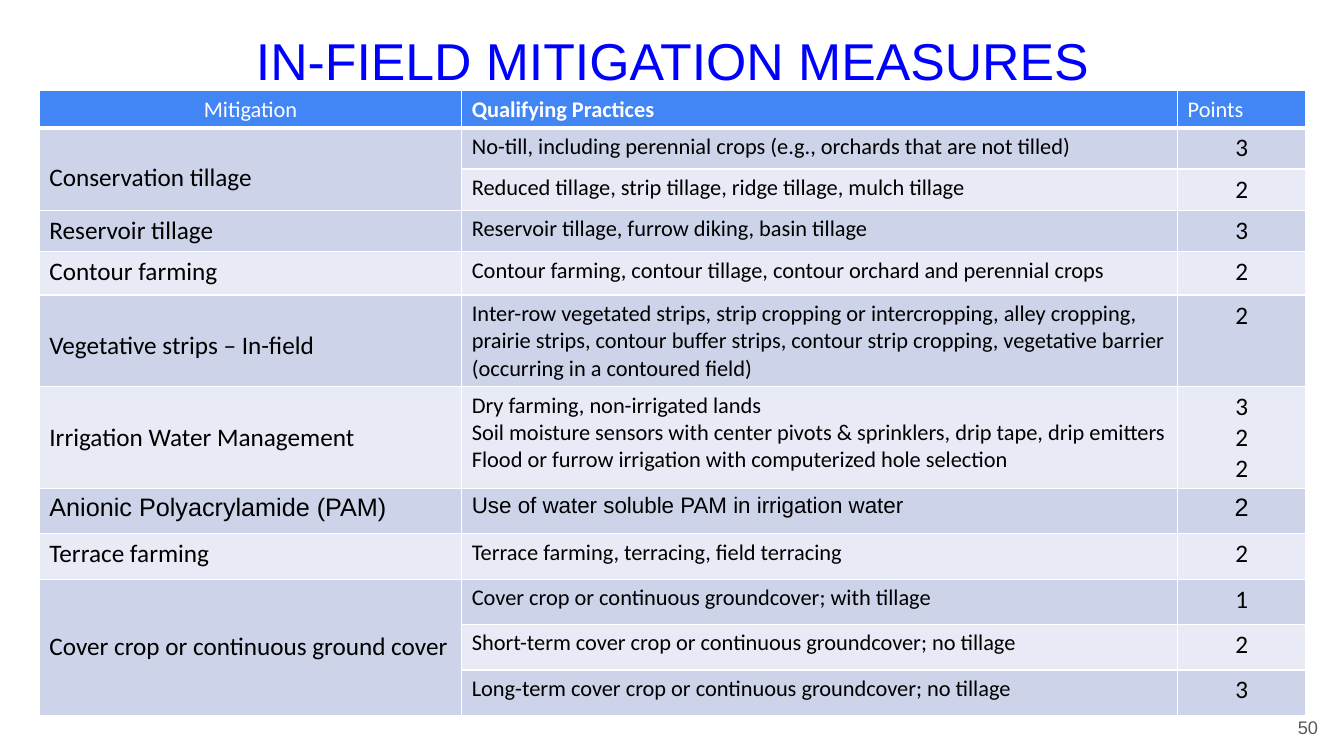
"""Build the in-field mitigation measures slide."""
from dataclasses import dataclass

from lxml import etree
from pptx import Presentation
from pptx.dml.color import RGBColor
from pptx.enum.text import MSO_ANCHOR, PP_ALIGN
from pptx.oxml.ns import qn
from pptx.util import Inches, Pt

LEFT, CENTER, RIGHT = PP_ALIGN.LEFT, PP_ALIGN.CENTER, PP_ALIGN.RIGHT
TOP, MIDDLE = MSO_ANCHOR.TOP, MSO_ANCHOR.MIDDLE


@dataclass(frozen=True)
class Theme:
    """Fonts, colours and type sizes of the slide."""
    sans: str = "Arial"
    body: str = "Calibri"
    title: str = "0000FF"
    number: str = "595959"
    header: str = "4285F4"
    dark_band: str = "CDD4EA"
    light_band: str = "E8EBF5"
    white: str = "FFFFFF"
    black: str = "000000"
    title_size: int = 37
    number_size: int = 13
    large: int = 18
    small: int = 16


THEME = Theme()
COLUMN_WIDTHS = (4.19, 7.1, 1.27)
ROW_HEIGHTS = (0.36, 0.41, 0.41, 0.41, 0.43, 0.91, 1.01) + (0.45,) * 5
LOWERED_TOP = 0.35
HEADERS = (("Mitigation", CENTER, False), ("Qualifying Practices", LEFT, True),
           ("Points", LEFT, False))
MEASURES = (
    ("Conservation tillage", {"top": LOWERED_TOP}, (
        ("No-till, including perennial crops (e.g., orchards that are not tilled)", "3"),
        ("Reduced tillage, strip tillage, ridge tillage, mulch tillage", "2"))),
    ("Reservoir tillage", {}, (
        ("Reservoir tillage, furrow diking, basin tillage", "3"),)),
    ("Contour farming", {}, (
        ("Contour farming, contour tillage, contour orchard and perennial crops", "2"),)),
    ("Vegetative strips – In-field", {"top": LOWERED_TOP}, (
        ("Inter-row vegetated strips, strip cropping or intercropping, alley cropping, "
         "prairie strips, contour buffer strips, contour strip cropping, vegetative "
         "barrier (occurring in a contoured field)", "2"),)),
    ("Irrigation Water Management", {"anchor": MIDDLE}, (
        ("Dry farming, non-irrigated lands\n"
         "Soil moisture sensors with center pivots & sprinklers, drip tape, drip emitters\n"
         "Flood or furrow irrigation with computerized hole selection", "3\n2\n2"),)),
    ("Anionic Polyacrylamide (PAM)", {"font": THEME.sans}, (
        ("Use of water soluble PAM in irrigation water", "2"),)),
    ("Terrace farming", {}, (
        ("Terrace farming, terracing, field terracing", "2"),)),
    ("Cover crop or continuous ground cover", {"anchor": MIDDLE}, (
        ("Cover crop or continuous groundcover; with tillage", "1"),
        ("Short-term cover crop or continuous groundcover; no tillage", "2"),
        ("Long-term cover crop or continuous groundcover; no tillage", "3"))),
)


def write_text(frame, text, *, size, font=THEME.body, color=THEME.black,
               bold=False, align=LEFT, spacing=1.0):
    """Write one formatted paragraph for each line of text."""
    frame.word_wrap = True
    for index, line in enumerate(text.split("\n")):
        para = frame.add_paragraph() if index else frame.paragraphs[0]
        para.alignment = align
        para.line_spacing = spacing
        span = para.add_run()
        span.text = line
        span.font.name = font
        span.font.size = Pt(size)
        span.font.bold = bold
        span.font.color.rgb = RGBColor.from_string(color)


def add_text(slide, text, left, top, width, height, **text_format):
    """Add a vertically centred text box."""
    box = slide.shapes.add_textbox(Inches(left), Inches(top), Inches(width), Inches(height))
    box.text_frame.vertical_anchor = MIDDLE
    write_text(box.text_frame, text, **text_format)


def style_cell(cell, fill, bottom_width=1):
    """Give a cell its white borders and its fill."""
    properties = cell._tc.get_or_add_tcPr()
    for side, width in (("L", 1), ("R", 1), ("T", 1), ("B", bottom_width)):
        line = etree.SubElement(properties, qn(f"a:ln{side}"), w=str(Pt(width)))
        solid = etree.SubElement(line, qn("a:solidFill"))
        etree.SubElement(solid, qn("a:srgbClr"), val=THEME.white)
    cell.fill.solid()
    cell.fill.fore_color.rgb = RGBColor.from_string(fill)


def fill_cell(cell, text, *, anchor=TOP, top=0.05, **text_format):
    """Place text in a cell."""
    cell.vertical_anchor = anchor
    cell.margin_top = Inches(top)
    write_text(cell.text_frame, text, **text_format)


def add_measure(table, row, name, name_format, practices):
    """Fill the rows of one measure and return the next free row."""
    font = name_format.get("font", THEME.body)
    name_cell = table.cell(row, 0)
    if len(practices) > 1:
        name_cell.merge(table.cell(row + len(practices) - 1, 0))
    fill_cell(name_cell, name, size=THEME.large, **name_format)
    for offset, (practice, points) in enumerate(practices):
        fill_cell(table.cell(row + offset, 1), practice, size=THEME.small, font=font)
        fill_cell(table.cell(row + offset, 2), points, size=THEME.large, font=font,
                  align=CENTER)
    return row + len(practices)


def add_measures_table(slide, left, top):
    """Add the banded table of measures, practices and points."""
    table = slide.shapes.add_table(
        len(ROW_HEIGHTS), len(COLUMN_WIDTHS), Inches(left), Inches(top),
        Inches(sum(COLUMN_WIDTHS)), Inches(sum(ROW_HEIGHTS))).table
    for column, width in zip(table.columns, COLUMN_WIDTHS):
        column.width = Inches(width)
    for index, height in enumerate(ROW_HEIGHTS):
        row = table.rows[index]
        row.height = Inches(height)
        band = THEME.dark_band if index % 2 else THEME.light_band
        for cell in row.cells:
            style_cell(cell, band if index else THEME.header, 1 if index else 3)
    for column, (text, align, bold) in enumerate(HEADERS):
        fill_cell(table.cell(0, column), text, size=THEME.small, color=THEME.white,
                  align=align, bold=bold)
    next_row = 1
    for name, name_format, practices in MEASURES:
        next_row = add_measure(table, next_row, name, name_format, practices)


def main():
    """Build and save the deck."""
    deck = Presentation()
    deck.slide_width, deck.slide_height = Inches(13.33), Inches(7.5)
    slide = deck.slides.add_slide(deck.slide_layouts[6])
    add_text(slide, "IN-FIELD MITIGATION MEASURES", 0.92, 0.26, 11.5, 0.75,
             size=THEME.title_size, font=THEME.sans, color=THEME.title,
             align=CENTER, spacing=0.9)
    add_text(slide, "50", 12.37, 6.93, 0.8, 0.57, size=THEME.number_size,
             font=THEME.sans, color=THEME.number, align=RIGHT)
    add_measures_table(slide, 0.39, 0.9)
    deck.save("out.pptx")


if __name__ == "__main__":
    main()
